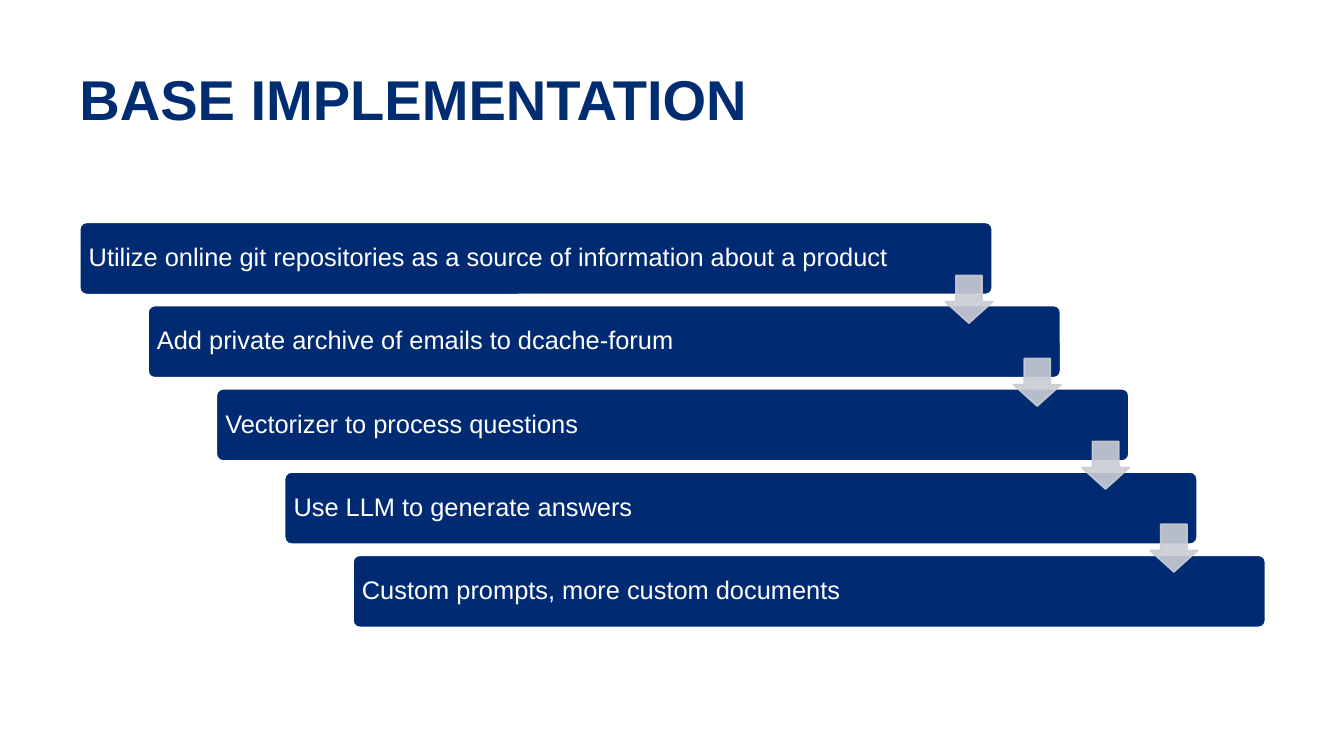
"""Build the base implementation slide: five staggered steps joined by arrows."""
from dataclasses import dataclass

from lxml import etree
from pptx import Presentation
from pptx.dml.color import RGBColor
from pptx.enum.shapes import MSO_SHAPE
from pptx.enum.text import MSO_ANCHOR, PP_ALIGN
from pptx.oxml.ns import qn
from pptx.util import Inches, Pt

BAR = MSO_SHAPE.ROUNDED_RECTANGLE
ARROW = MSO_SHAPE.DOWN_ARROW
MIDDLE = MSO_ANCHOR.MIDDLE
TOP = MSO_ANCHOR.TOP
LEFT = PP_ALIGN.LEFT


@dataclass(frozen=True)
class Theme:
    font: str = "Arial"
    title_color: RGBColor = RGBColor(0x00, 0x2D, 0x72)
    bar_color: RGBColor = RGBColor(0x00, 0x2B, 0x72)
    arrow_color: RGBColor = RGBColor(0xCA, 0xCC, 0xD4)
    white: RGBColor = RGBColor(0xFF, 0xFF, 0xFF)
    title_size: float = 33.1
    step_size: float = 15


theme = Theme()


def write_text(box, text, size, color, inset, anchor, bold=False):
    frame = box.text_frame
    frame.word_wrap = True
    frame.vertical_anchor = anchor
    frame.margin_left = frame.margin_right = Inches(inset)
    frame.margin_top = frame.margin_bottom = Inches(inset)
    para = frame.paragraphs[0]
    para.alignment = LEFT
    para.line_spacing = 0.9
    span = para.add_run()
    span.text = text
    span.font.name = theme.font
    span.font.size = Pt(size)
    span.font.bold = bold
    span.font.color.rgb = color


def add_block(kind, left, top, width, height, fill, line, line_width):
    block = page.shapes.add_shape(kind, Inches(left), Inches(top), Inches(width), Inches(height))
    block.shadow.inherit = False
    block.fill.solid()
    block.fill.fore_color.rgb = fill
    block.line.color.rgb = line
    block.line.width = Pt(line_width)
    return block


deck = Presentation()
deck.slide_width = Inches(11.02)
deck.slide_height = Inches(6.2)
page = deck.slides.add_slide(deck.slide_layouts[6])

title = page.shapes.add_textbox(Inches(0.65), Inches(0.59), Inches(9.72), Inches(1.04))
write_text(title, "BASE IMPLEMENTATION", theme.title_size, theme.title_color, 0, TOP, bold=True)

steps = [
    "Utilize online git repositories as a source of information about a product",
    "Add private archive of emails to dcache-forum",
    "Vectorizer to process questions",
    "Use LLM to generate answers",
    "Custom prompts, more custom documents",
]
first_left, first_top, last_top = 0.65, 1.82, 4.55
bar_width, bar_height, arrow_size = 7.49, 0.6, 0.39
shift = 0.56
drop = (last_top - first_top) / (len(steps) - 1)

for index, step in enumerate(steps):
    bar = add_block(BAR, first_left + index * shift, first_top + index * drop,
                    bar_width, bar_height, theme.bar_color, theme.white, 1.5)
    bar.adjustments[0] = 0.1
    write_text(bar, step, theme.step_size, theme.white, 0.06, MIDDLE)

arrow_left = first_left + bar_width - arrow_size
for index in range(len(steps) - 1):
    arrow = add_block(ARROW, arrow_left + index * shift, 2.26 + index * 0.68,
                      arrow_size, arrow_size, theme.arrow_color, theme.arrow_color, 1)
    arrow.adjustments[0] = 0.45
    arrow.adjustments[1] = 0.45
    arrow.adjustments[0] = 0.55
    for color in arrow._element.spPr.iter(qn("a:srgbClr")):
        etree.SubElement(color, qn("a:alpha")).set("val", "90000")

deck.save("out.pptx")
